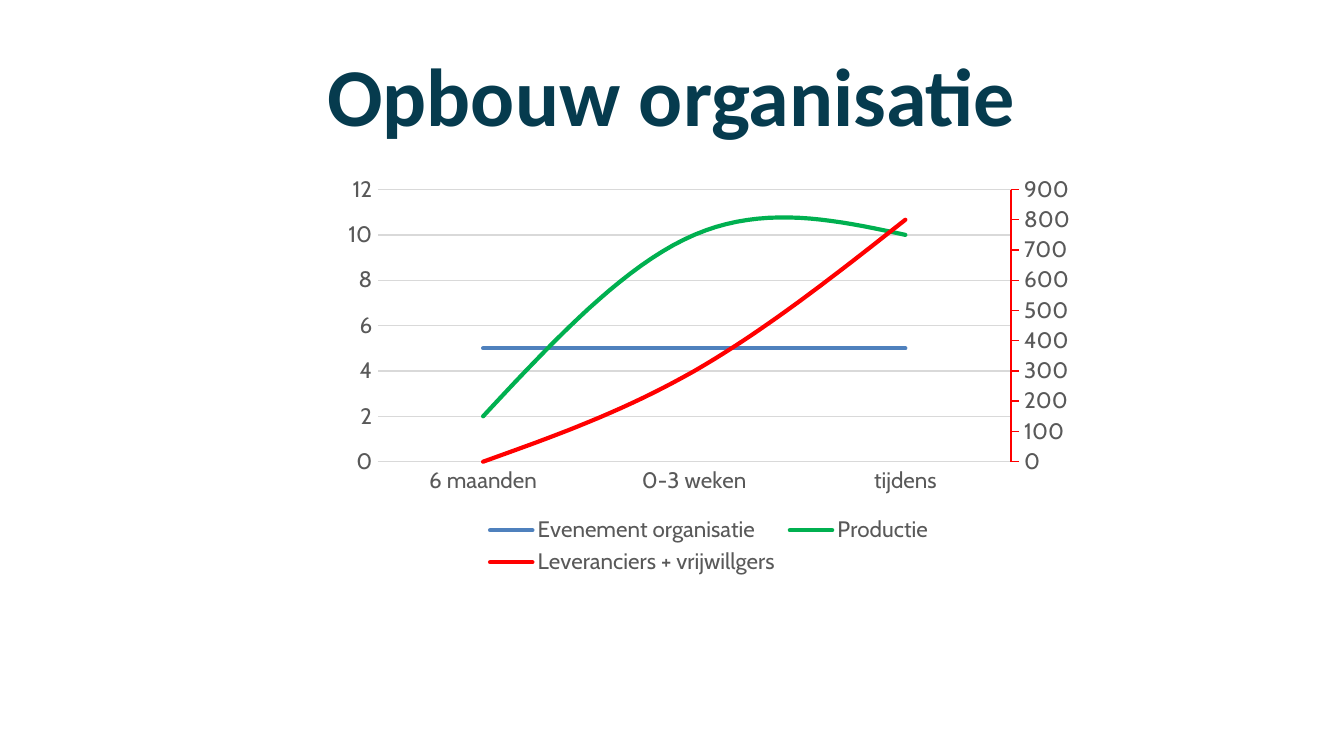
from copy import deepcopy
from dataclasses import dataclass

from pptx import Presentation
from pptx.chart.axis import CategoryAxis, ValueAxis
from pptx.chart.data import CategoryChartData as ChartData
from pptx.dml.color import RGBColor
from pptx.enum.chart import XL_CHART_TYPE as ChartType
from pptx.enum.chart import XL_LEGEND_POSITION as LegendPosition
from pptx.enum.chart import XL_MARKER_STYLE as MarkerStyle
from pptx.enum.chart import XL_TICK_MARK as TickMark
from pptx.enum.text import MSO_ANCHOR as Anchor
from pptx.enum.text import PP_ALIGN as Align
from pptx.oxml.ns import qn
from pptx.util import Pt

PX = 9525


@dataclass(frozen=True)
class Theme:
    heading_font: str = "Calibri"
    chart_font: str = "Cabin"
    heading_size: int = 44
    chart_size: int = 10
    label_size: int = 12
    series_width: float = 2.25
    axis_width: float = 0.75
    heading: str = "063B4E"
    chart_text: str = "000000"
    label: str = "595959"
    grid: str = "D9D9D9"
    organisation: str = "4F81BD"
    production: str = "00B050"
    suppliers: str = "FF0000"


def apply(target, values):
    for name, value in values.items():
        setattr(target, name, value)


class SlideBuilder:
    def __init__(self, page, theme):
        self.page = page
        self.theme = theme

    def style_font(self, font, name, size, color, **values):
        apply(font, {"name": name, "size": Pt(size), **values})
        font.color.rgb = RGBColor.from_string(color)

    def style_label(self, font):
        theme = self.theme
        self.style_font(font, theme.chart_font, theme.label_size, theme.label)

    def style_line(self, line, color, width):
        line.color.rgb = RGBColor.from_string(color)
        line.width = Pt(width)

    def title(self, text, bounds):
        theme = self.theme
        box = self.page.shapes.add_textbox(*(value * PX for value in bounds))
        apply(box.text_frame, {"word_wrap": True, "vertical_anchor": Anchor.MIDDLE})
        para = box.text_frame.paragraphs[0]
        para.alignment = Align.CENTER
        span = para.add_run()
        span.text = text
        self.style_font(span.font, theme.heading_font, theme.heading_size, theme.heading, bold=True)

    def line_chart(self, bounds, categories, series_rows):
        theme = self.theme
        data = ChartData()
        data.categories = categories
        for name, values, color, smooth in series_rows:
            data.add_series(name, values)
        frame = self.page.shapes.add_chart(
            ChartType.LINE, *(value * PX for value in bounds), data
        )
        chart = frame.chart
        apply(chart, {"has_title": False, "has_legend": True})
        self.style_font(chart.font, theme.chart_font, theme.chart_size, theme.chart_text)
        apply(chart.legend, {"position": LegendPosition.BOTTOM, "include_in_layout": False})
        self.style_label(chart.legend.font)
        chart.plots[0].vary_by_categories = False

        for series, (name, values, color, smooth) in zip(chart.plots[0].series, series_rows):
            series.smooth = smooth
            series.marker.style = MarkerStyle.NONE
            self.style_line(series.format.line, color, theme.series_width)
            for outline in series._element.iter(qn("a:ln")):
                outline.set("cap", "rnd")

        for axis in (chart.category_axis, chart.value_axis):
            apply(axis, {"major_tick_mark": TickMark.NONE, "minor_tick_mark": TickMark.NONE})
            self.style_label(axis.tick_labels.font)
        self.style_line(chart.category_axis.format.line, theme.grid, theme.axis_width)
        value_axis = chart.value_axis
        value_axis.has_major_gridlines = True
        self.style_line(value_axis.major_gridlines.format.line, theme.grid, theme.axis_width)
        value_axis.format.line.fill.background()
        return chart

    def move_last_series_right(self, chart, color):
        category_id, value_id = "50010", "50020"
        left_plot = chart.plots[0]._element
        right_plot = deepcopy(left_plot)
        left_plot.remove(left_plot.findall(qn("c:ser"))[-1])
        for series in right_plot.findall(qn("c:ser"))[:-1]:
            right_plot.remove(series)
        for reference, axis_id in zip(right_plot.findall(qn("c:axId")), (category_id, value_id)):
            reference.set("val", axis_id)
        left_plot.addnext(right_plot)

        category = deepcopy(chart.category_axis._element)
        value = deepcopy(chart.value_axis._element)
        for axis, own_id, cross_id in (
            (category, category_id, value_id),
            (value, value_id, category_id),
        ):
            axis.find(qn("c:axId")).set("val", own_id)
            axis.find(qn("c:crossAx")).set("val", cross_id)
        value.find(qn("c:axPos")).set("val", "r")
        value.find(qn("c:crosses")).set("val", "max")
        chart.value_axis._element.addnext(value)
        value.addnext(category)

        CategoryAxis(category).visible = False
        right_axis = ValueAxis(value)
        apply(right_axis, {"has_major_gridlines": False, "major_tick_mark": TickMark.OUTSIDE})
        self.style_line(right_axis.format.line, color, self.theme.axis_width)


def main():
    theme = Theme()
    deck = Presentation()
    apply(deck, {"slide_width": 960 * PX, "slide_height": 540 * PX})
    page = deck.slides.add_slide(deck.slide_layouts[6])
    builder = SlideBuilder(page, theme)
    builder.title("Opbouw organisatie", (48, 22, 864, 90))
    chart = builder.line_chart(
        (238, 120, 537, 295),
        ("6 maanden", "0-3 weken", "tijdens"),
        (
            ("Evenement organisatie", (5, 5, 5), theme.organisation, False),
            ("Productie", (2, 10, 10), theme.production, True),
            ("Leveranciers + vrijwillgers", (0, 300, 800), theme.suppliers, True),
        ),
    )
    builder.move_last_series_right(chart, theme.suppliers)
    deck.save("out.pptx")


if __name__ == "__main__":
    main()
